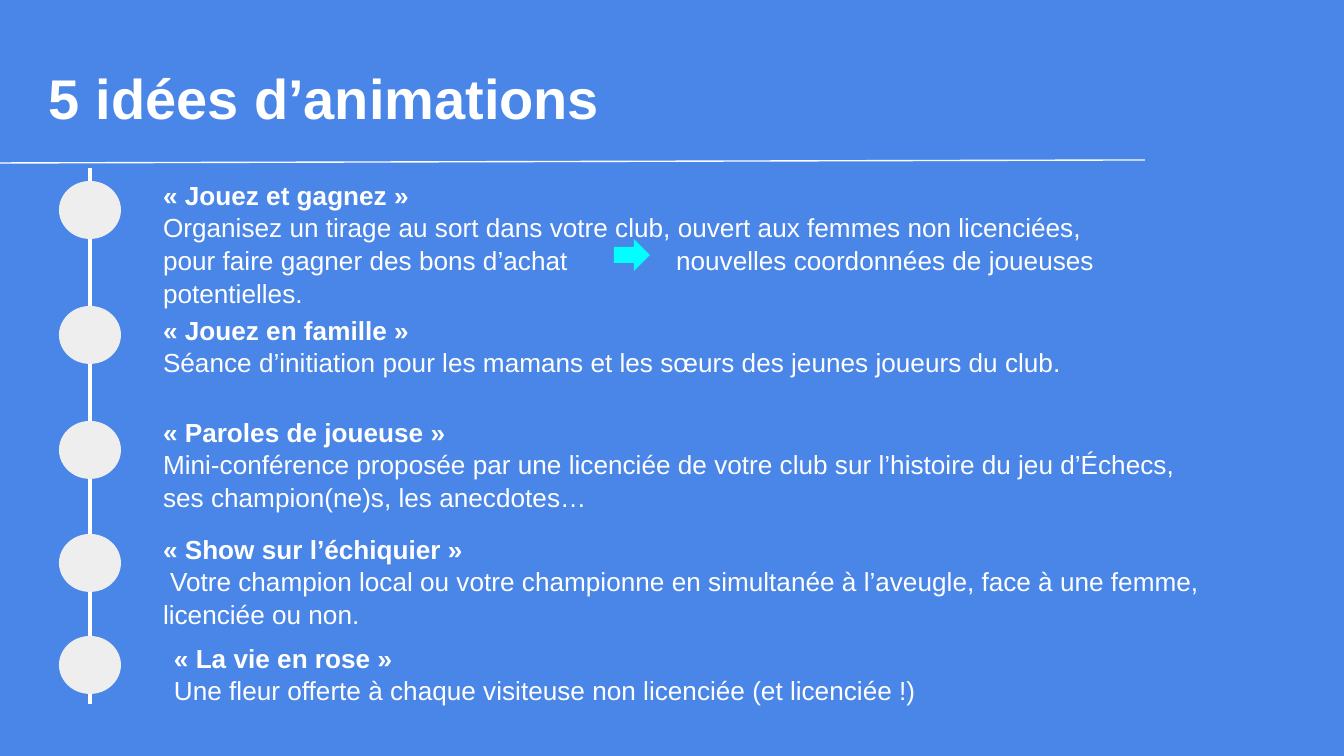
from lxml.etree import SubElement
from pptx import Presentation
from pptx.dml.color import RGBColor
from pptx.enum.shapes import MSO_CONNECTOR, MSO_SHAPE
from pptx.enum.text import MSO_ANCHOR, MSO_AUTO_SIZE, PP_ALIGN
from pptx.oxml.ns import qn
from pptx.util import Pt

BLUE = RGBColor(0x4A, 0x86, 0xE8)
WHITE = RGBColor(0xFF, 0xFF, 0xFF)
GREY = RGBColor(0xEE, 0xEE, 0xEE)
CYAN = RGBColor(0x00, 0xFF, 0xFF)
FONT = "Arial"
SCALE = 914400 / 134.4
TAB = 513
INDENT = 7

IDEAS = [
    ((150, 165, 962, 164), "« Jouez et gagnez »", [
        "Organisez un tirage au sort dans votre club, ouvert aux femmes non licenciées,",
        "pour faire gagner des bons d’achat\tnouvelles coordonnées de joueuses potentielles."]),
    ((150, 300, 980, 58), "« Jouez en famille »", [
        "Séance d’initiation pour les mamans et les sœurs des jeunes joueurs du club."]),
    ((150, 402, 1058, 142), "« Paroles de joueuse »", [
        "Mini-conférence proposée par une licenciée de votre club sur l’histoire du jeu d’Échecs,",
        "ses champion(ne)s, les anecdotes…"]),
    ((150, 519, 1074, 109), "« Show sur l’échiquier »", [
        "Votre champion local ou votre championne en simultanée à l’aveugle, "
        "face à une femme, licenciée ou non."]),
    ((161, 628, 1001, 93), "« La vie en rose »", [
        "Une fleur offerte à chaque visiteuse non licenciée (et licenciée !)"]),
]
DOTS = [181, 306, 421, 534, 636]


def px(n):
    """Turn pixels into EMU."""
    return round(n * SCALE)


def set_frame(frame):
    """Give a text frame its insets, wrapping and top anchor."""
    frame.word_wrap = True
    frame.auto_size = MSO_AUTO_SIZE.NONE
    frame.vertical_anchor = MSO_ANCHOR.TOP
    frame.margin_left = frame.margin_right = px(13)
    frame.margin_top = frame.margin_bottom = px(13)


def add_run(para, text, size, bold, space):
    """Add one white run to a left-aligned paragraph."""
    para.alignment = PP_ALIGN.LEFT
    para.line_spacing = space
    run = para.add_run()
    run.text = text
    run.font.name = FONT
    run.font.size = Pt(size)
    run.font.bold = bold
    run.font.color.rgb = WHITE


def set_title(slide, text):
    """Place and format the title placeholder."""
    title = slide.shapes.title
    title.left, title.top, title.width, title.height = map(px, (36, 44, 995, 82))
    set_frame(title.text_frame)
    add_run(title.text_frame.paragraphs[0], text, 30, True, 1.1)


def add_tab(para, pos):
    """Set a left tab stop on a paragraph."""
    tabs = SubElement(para._p.get_or_add_pPr(), qn("a:tabLst"))
    SubElement(tabs, qn("a:tab"), pos=str(px(pos)), algn="l")


def add_idea(slide, box, head, lines):
    """Add a bold heading with its plain lines."""
    frame = slide.shapes.add_textbox(*map(px, box)).text_frame
    set_frame(frame)
    add_run(frame.paragraphs[0], head, 14, True, 1.04)
    for line in lines:
        para = frame.add_paragraph()
        add_run(para, line, 14, False, 1.04)
        if "\t" in line:
            add_tab(para, TAB)
        if line.startswith("Votre"):
            para._p.get_or_add_pPr().set("indent", str(px(INDENT)))


def add_line(slide, ends, width):
    """Draw a white straight line without shadow."""
    line = slide.shapes.add_connector(MSO_CONNECTOR.STRAIGHT, *map(px, ends))
    line.line.color.rgb = WHITE
    line.line.width = Pt(width)
    SubElement(line._element.spPr, qn("a:effectLst"))


def add_form(slide, kind, box, color):
    """Add a flat shape without outline."""
    form = slide.shapes.add_shape(kind, *map(px, box))
    form.shadow.inherit = False
    form.fill.solid()
    form.fill.fore_color.rgb = color
    form.line.fill.background()


def main():
    """Build and save the slide."""
    deck = Presentation()
    deck.slide_width, deck.slide_height = px(1344), px(756)
    slide = deck.slides.add_slide(deck.slide_layouts[5])
    slide.background.fill.solid()
    slide.background.fill.fore_color.rgb = BLUE
    set_title(slide, "5 idées d’animations")
    add_line(slide, (0, 163, 1145, 160), 0.75)
    for box, head, lines in IDEAS:
        add_idea(slide, box, head, lines)
    add_line(slide, (90, 168, 90, 704), 2.25)
    for top in DOTS:
        add_form(slide, MSO_SHAPE.OVAL, (59, top, 62, 58), GREY)
    add_form(slide, MSO_SHAPE.RIGHT_ARROW, (614, 239, 36, 32), CYAN)
    deck.save("out.pptx")


if __name__ == "__main__":
    main()
